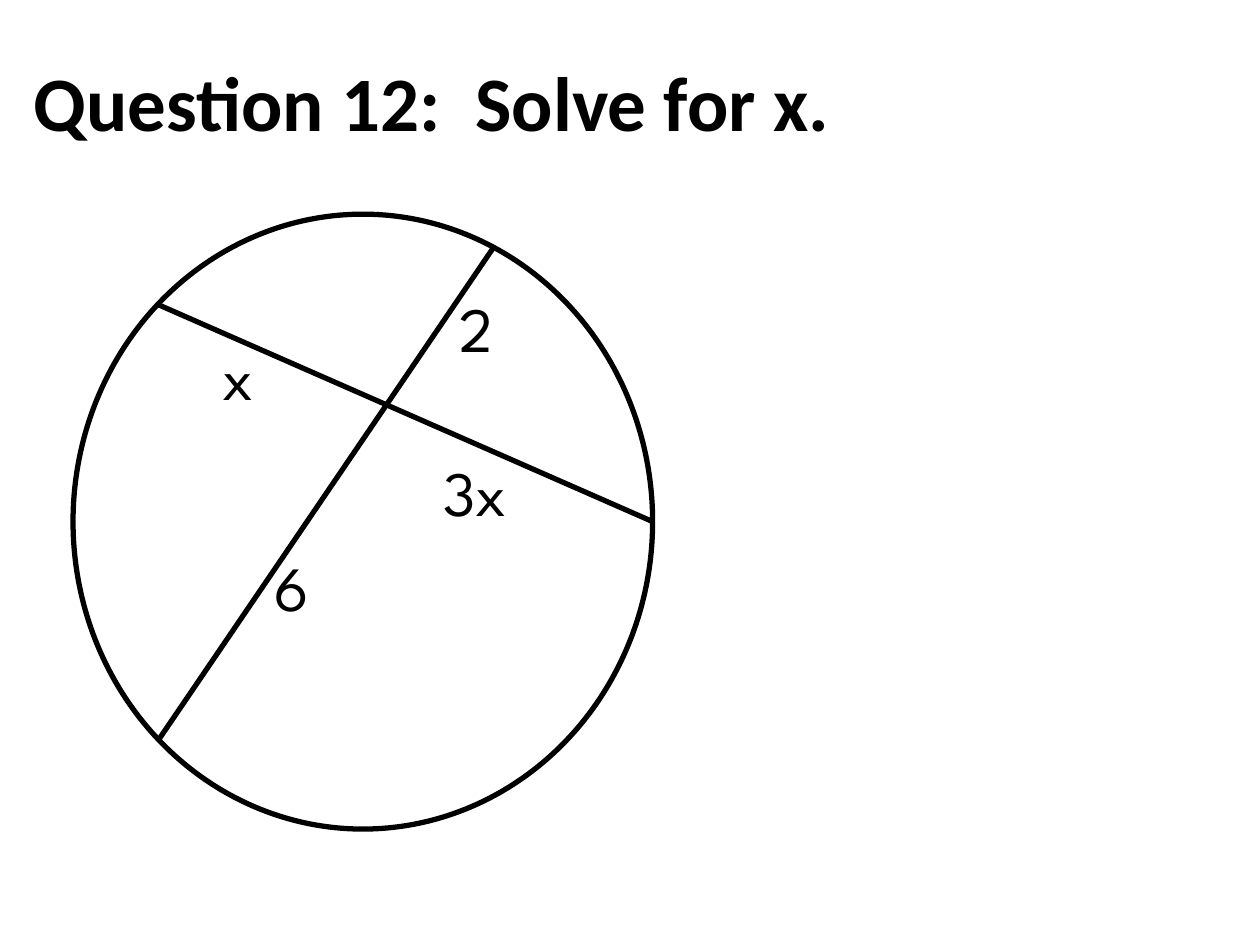
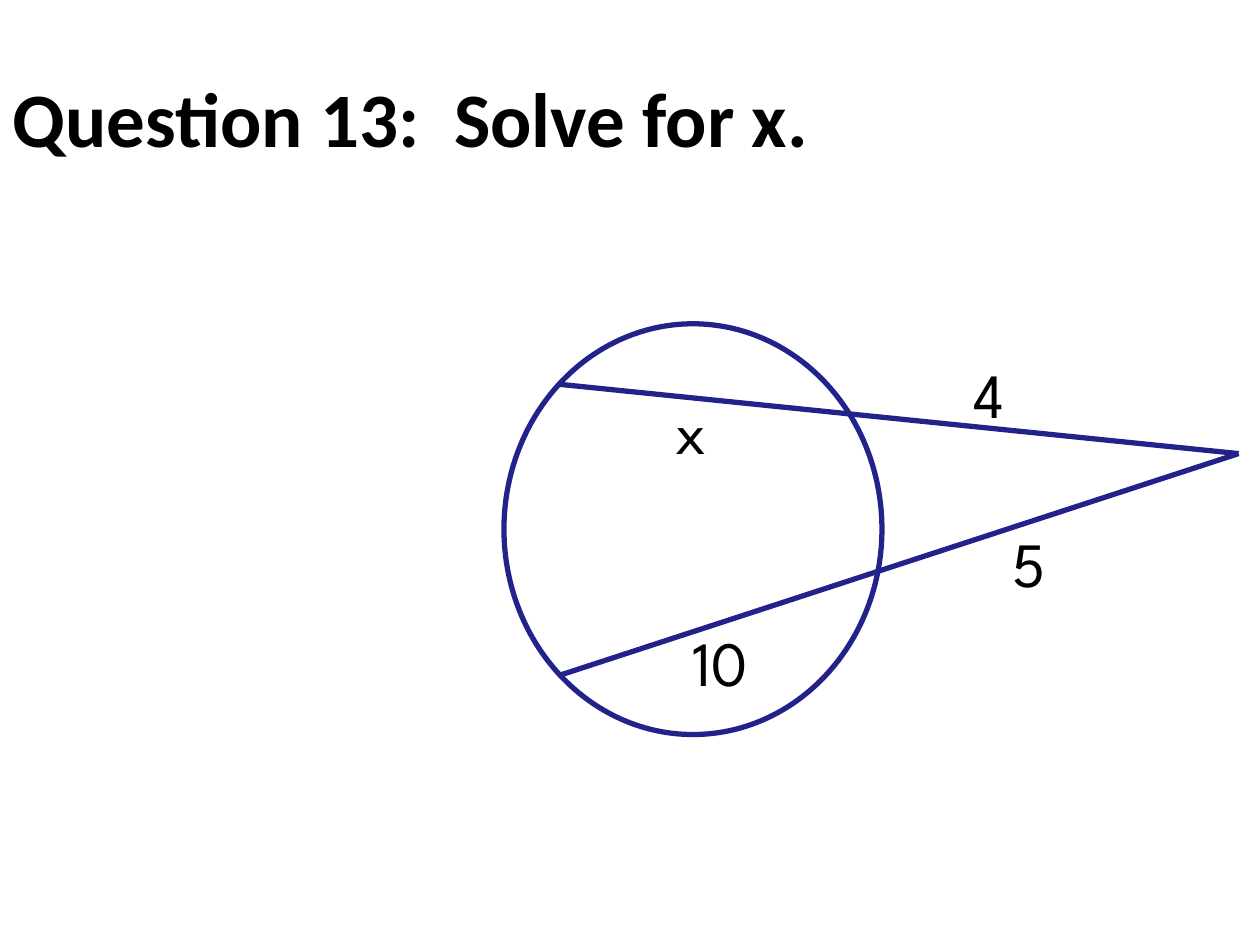
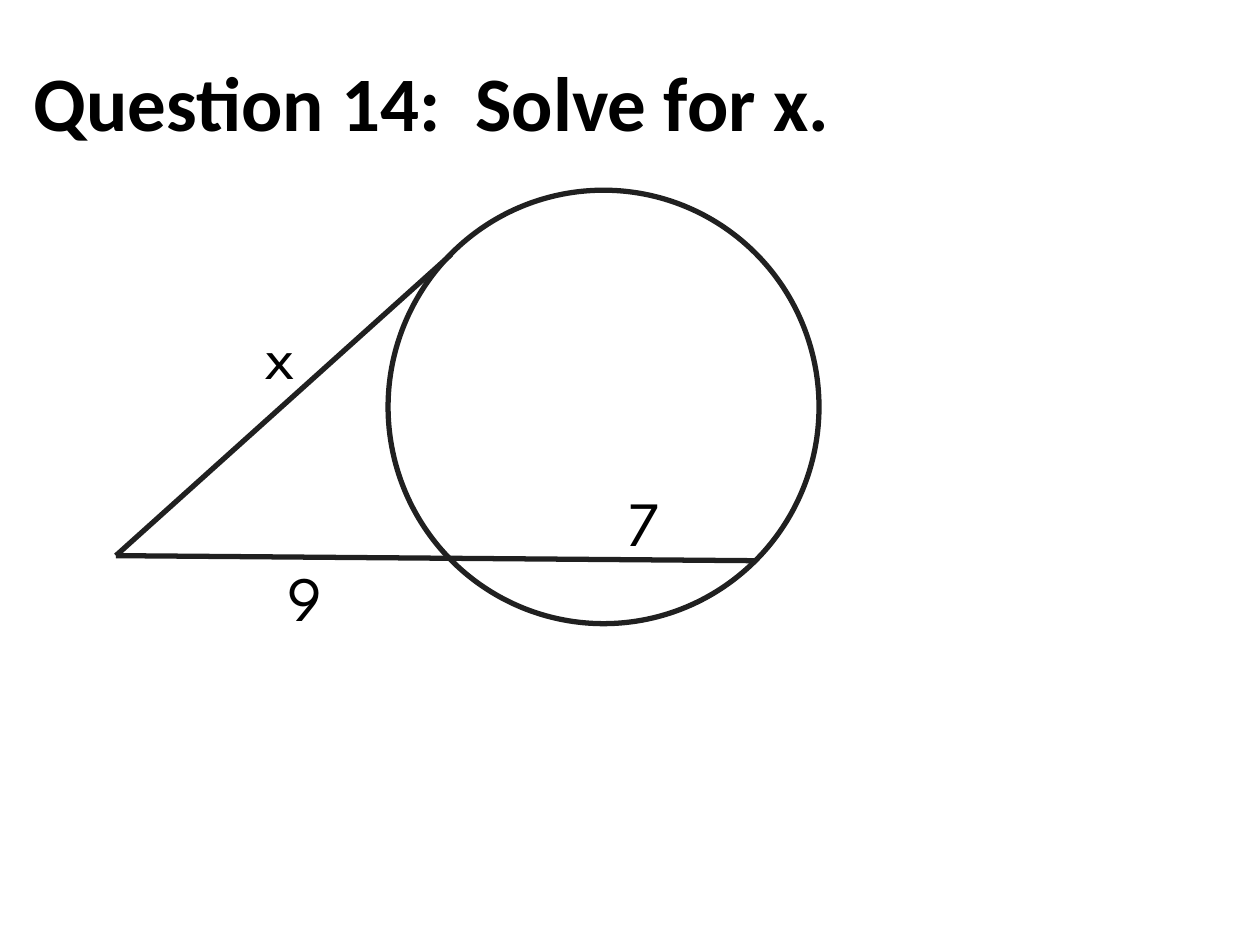
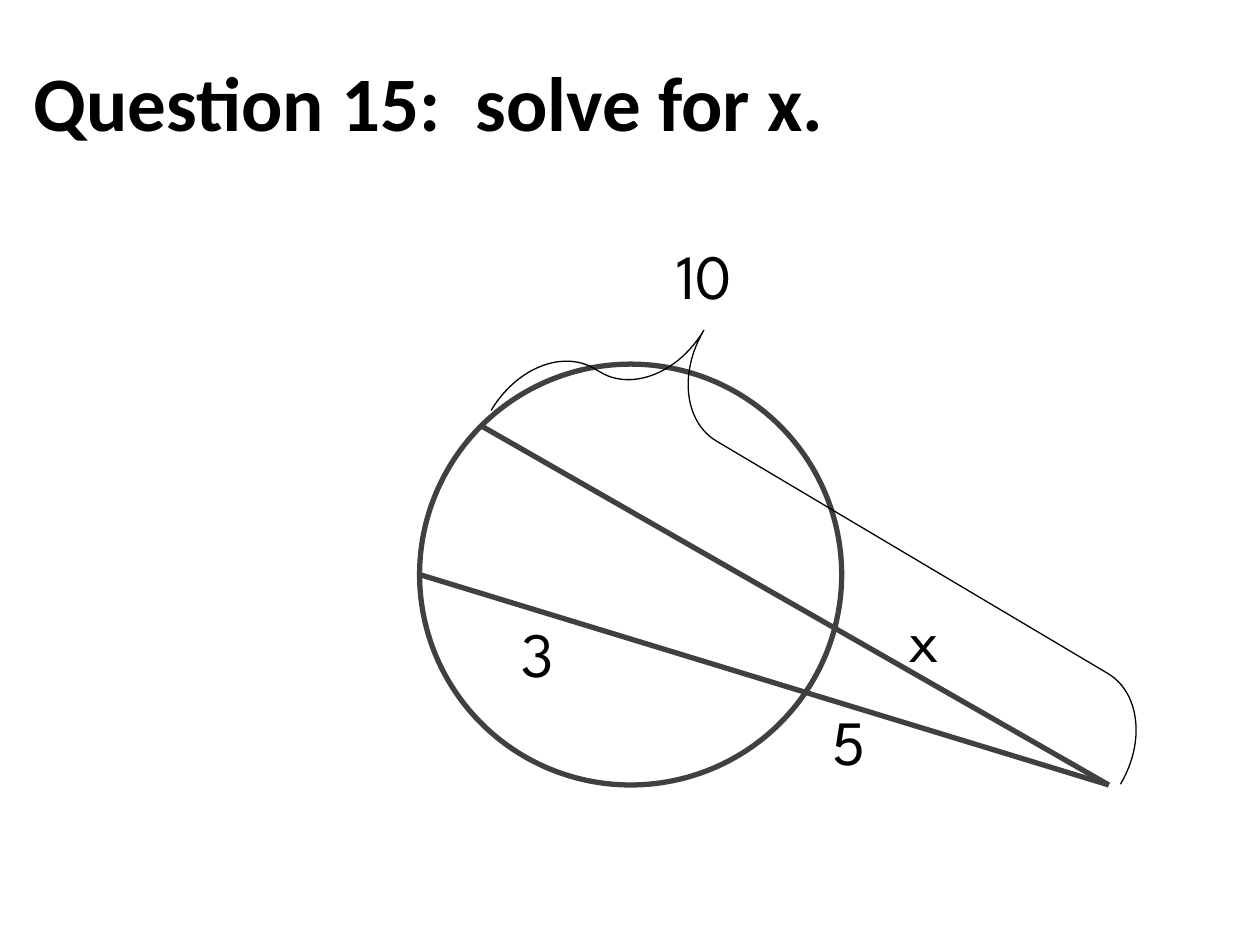
from pptx import Presentation
from pptx.dml.color import RGBColor
from pptx.enum.shapes import MSO_CONNECTOR, MSO_SHAPE
from pptx.enum.text import MSO_ANCHOR, MSO_AUTO_SIZE
from pptx.oxml.ns import qn
from pptx.util import Inches, Pt
from lxml.etree import SubElement

# Shared style
BLACK = "000000"
TITLE_FONT, TITLE_SIZE = "Calibri", 44
LABEL_FONT, LABEL_SIZE = "League Spartan", 36
TITLE_PLACE = (0.17, 0.17)
TITLE_WIDTH, TITLE_HEIGHT = 8.5, 1.25
LABEL_HEIGHT = 0.71
FIGURE_WEIGHT, BRACE_WEIGHT = 3, 0.75

# Each question: circle box, segments as (start, end), labels as (text, left, top, width)
QUESTIONS = [
    {
        "title": "Question 12:  Solve for x.",
        "color": BLACK,
        "circle": (0.58, 1.7, 4.6, 4.88),
        "segments": [((1.26, 2.42), (5.18, 4.14)), ((1.26, 5.87), (3.92, 1.96))],
        "labels": [("x", 1.67, 2.63, 1.45), ("2", 3.55, 2.25, 1.45),
                   ("6", 2.08, 4.3, 2.42), ("3x", 3.42, 3.55, 2.66)],
    },
    {
        "title": "Question 13:  Solve for x.",
        "title_place": (0, 0.3),
        "color": "22228B",
        "circle": (4, 2.57, 3, 3.26),
        "segments": [((4.44, 3.05), (9.83, 3.6)), ((4.44, 5.36), (9.83, 3.6))],
        "labels": [("x", 5.26, 3.06, 0.95), ("4", 7.63, 2.77, 0.95),
                   ("10", 5.4, 4.9, 1.58), ("5", 7.94, 4.11, 0.95)],
    },
    {
        "title": "Question 14:  Solve for x.",
        "color": "202020",
        "circle": (3.08, 1.51, 3.42, 3.44),
        "segments": [((3.58, 2.02), (0.92, 4.41)), ((6, 4.45), (0.92, 4.41))],
        "labels": [("x", 2, 2.46, 1.08), ("9", 2.18, 4.38, 1.8),
                   ("7", 4.88, 3.79, 1.08)],
    },
    {
        "title": "Question 15:  solve for x.",
        "color": "404040",
        "circle": (3.33, 2.89, 3.35, 3.34),
        "segments": [((3.82, 3.38), (8.8, 6.23)), ((8.8, 6.23), (3.33, 4.56))],
        "labels": [("x", 7.11, 4.71, 1.06), ("3", 4.04, 4.83, 1.06),
                   ("10", 5.27, 1.83, 1.76), ("5", 6.51, 5.53, 1.06)],
        "brace": (6.05, 1.23, 1.41, 5.81),
    },
]


def rgb(hex_color):
    return RGBColor.from_string(hex_color)


def set_line(line, color, weight):
    line.color.rgb = rgb(color)
    line.width = Pt(weight)


# Text
def add_text(slide, text, box, font, size, bold=False):
    textbox = slide.shapes.add_textbox(*map(Inches, box))
    frame = textbox.text_frame
    frame.word_wrap = True
    frame.text = text
    run = frame.paragraphs[0].runs[0]
    run.font.name = font
    run.font.size = Pt(size)
    run.font.bold = bold
    run.font.color.rgb = rgb(BLACK)
    return frame


def add_title(slide, text, place):
    frame = add_text(slide, text, (*place, TITLE_WIDTH, TITLE_HEIGHT),
                     TITLE_FONT, TITLE_SIZE, bold=True)
    frame.vertical_anchor = MSO_ANCHOR.MIDDLE


def add_label(slide, text, left, top, width):
    frame = add_text(slide, text, (left, top, width, LABEL_HEIGHT),
                     LABEL_FONT, LABEL_SIZE)
    frame.auto_size = MSO_AUTO_SIZE.SHAPE_TO_FIT_TEXT


# Geometry
def add_outline(slide, preset, box, color, weight):
    outline = slide.shapes.add_shape(preset, *map(Inches, box))
    outline.shadow.inherit = False
    outline.fill.background()
    set_line(outline.line, color, weight)
    return outline


def add_segment(slide, start, end, color):
    segment = slide.shapes.add_connector(
        MSO_CONNECTOR.STRAIGHT, *map(Inches, (*start, *end)))
    set_line(segment.line, color, FIGURE_WEIGHT)
    SubElement(segment._element.spPr, qn("a:effectLst"))


def add_brace(slide, box):
    brace = add_outline(slide, MSO_SHAPE.RIGHT_BRACE, box, BLACK, BRACE_WEIGHT)
    brace.adjustments[0] = 0.379
    brace.adjustments[1] = 0.194
    brace.rotation = 300.7


def add_question(deck, question):
    slide = deck.slides.add_slide(deck.slide_layouts[6])
    color = question["color"]
    add_title(slide, question["title"], question.get("title_place", TITLE_PLACE))
    add_outline(slide, MSO_SHAPE.OVAL, question["circle"], color, FIGURE_WEIGHT)
    for start, end in question["segments"]:
        add_segment(slide, start, end, color)
    for label in question["labels"]:
        add_label(slide, *label)
    if "brace" in question:
        add_brace(slide, question["brace"])


def main():
    deck = Presentation()
    deck.slide_width = Inches(10)
    deck.slide_height = Inches(7.5)
    for question in QUESTIONS:
        add_question(deck, question)
    deck.save("out.pptx")


if __name__ == "__main__":
    main()
